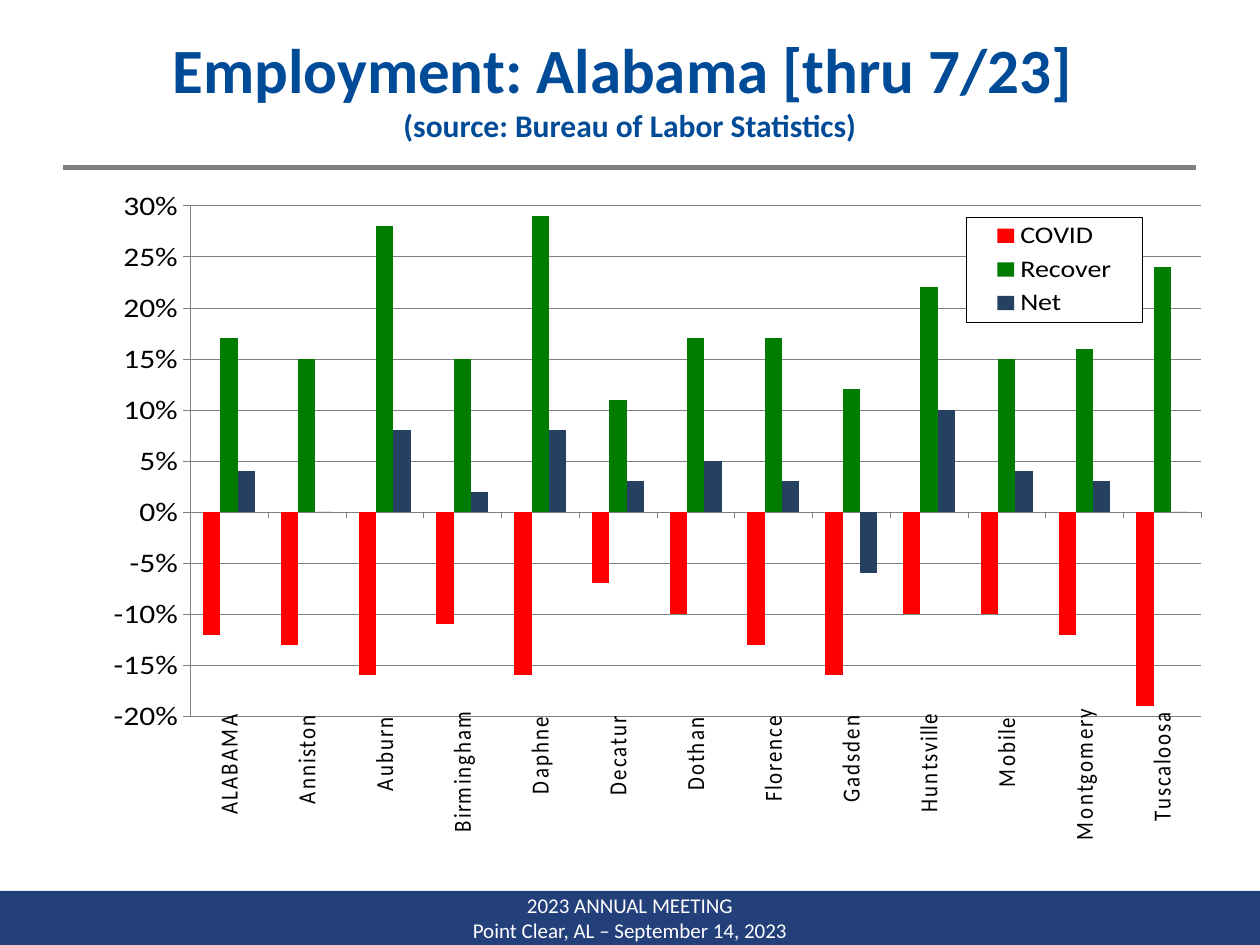
from lxml import etree
from pptx import Presentation
from pptx import util as u
from pptx.chart.data import CategoryChartData
from pptx.dml.color import RGBColor
from pptx.enum import chart as ch, shapes, text
from pptx.oxml import parse_xml
from pptx.oxml.ns import nsdecls, qn

NAVY = RGBColor(0x23, 0x40, 0x7A)
BLUE = RGBColor(0x00, 0x4B, 0x98)
GRAY = RGBColor(0x80, 0x80, 0x80)
BLACK = RGBColor(0, 0, 0)
WHITE = RGBColor(0xFF, 0xFF, 0xFF)
RED = RGBColor(0xFF, 0x00, 0x00)
GREEN = RGBColor(0x00, 0x7C, 0x01)
SLATE = RGBColor(0x25, 0x40, 0x61)
FONT = "Calibri"

# Metro areas: (name, COVID, Recover, Net)
METROS = [
    ("ALABAMA", -0.12, 0.17, 0.04),
    ("Anniston", -0.13, 0.15, 0),
    ("Auburn", -0.16, 0.28, 0.08),
    ("Birmingham", -0.11, 0.15, 0.02),
    ("Daphne", -0.16, 0.29, 0.08),
    ("Decatur", -0.07, 0.11, 0.03),
    ("Dothan", -0.10, 0.17, 0.05),
    ("Florence", -0.13, 0.17, 0.03),
    ("Gadsden", -0.16, 0.12, -0.06),
    ("Huntsville", -0.10, 0.22, 0.10),
    ("Mobile", -0.10, 0.15, 0.04),
    ("Montgomery", -0.12, 0.16, 0.03),
    ("Tuscaloosa", -0.19, 0.24, 0),
]
SERIES = [("COVID", RED), ("Recover", GREEN), ("Net", SLATE)]


def style(font, size, color, bold=False):
    font.name, font.size, font.bold = FONT, u.Pt(size), bold
    font.color.rgb = color


def inches(box):
    return [u.Inches(n) for n in box]


def add_title(slide, box):
    title = slide.shapes.title
    title.left, title.top, title.width, title.height = inches(box)
    frame = title.text_frame
    frame.word_wrap = True
    frame.auto_size = text.MSO_AUTO_SIZE.NONE
    frame.vertical_anchor = text.MSO_ANCHOR.MIDDLE
    para = frame.paragraphs[0]
    para.alignment = text.PP_ALIGN.CENTER
    head = para.add_run()
    head.text = "Employment: Alabama [thru 7/23] "
    style(head.font, 36, BLUE, True)
    para.add_line_break()
    sub = para.add_run()
    sub.text = "(source: Bureau of Labor Statistics)"
    style(sub.font, 18, BLUE, True)


def add_rule(slide, left, right, top):
    ends = inches((left, top, right, top))
    rule = slide.shapes.add_connector(shapes.MSO_CONNECTOR.STRAIGHT, *ends)
    rule.line.color.rgb = GRAY
    rule.line.width = u.Pt(3)
    etree.SubElement(rule._element.spPr, qn("a:effectLst"))


def add_footer(slide, box):
    bar = slide.shapes.add_shape(shapes.MSO_SHAPE.RECTANGLE, *inches(box))
    bar.shadow.inherit = False
    bar.fill.solid()
    bar.fill.fore_color.rgb = NAVY
    bar.line.fill.background()
    frame = bar.text_frame
    frame.word_wrap = False
    frame.vertical_anchor = text.MSO_ANCHOR.MIDDLE
    frame.text = "2023 ANNUAL MEETING\nPoint Clear, AL – September 14, 2023"
    for para in frame.paragraphs:
        para.alignment = text.PP_ALIGN.CENTER
        style(para.font, 12, WHITE)


def layout(box, inner=False):
    """Manual chart layout, in fractions of the chart's size."""
    target = '<c:layoutTarget val="inner"/>' if inner else ""
    modes = "".join(f'<c:{k}Mode val="edge"/>' for k in "xy")
    sizes = "".join(f'<c:{k} val="{v}"/>' for k, v in zip("xywh", box))
    return parse_xml(
        f'<c:layout {nsdecls("c")}><c:manualLayout>{target}{modes}{sizes}'
        "</c:manualLayout></c:layout>")


def place(part, mark, box, inner=False):
    """Give a chart part its layout, right after its mark or at its start."""
    for old in part.findall(qn("c:layout")):
        part.remove(old)
    spot = 0 if mark is None else part.index(part.find(qn(mark))) + 1
    part.insert(spot, layout(box, inner))


def add_legend(chart, box):
    chart.has_legend = True
    legend = chart.legend
    legend.position = ch.XL_LEGEND_POSITION.RIGHT
    legend.include_in_layout = True
    style(legend.font, 16, BLACK)
    place(legend._element, "c:legendPos", box)
    frame = parse_xml(
        f'<c:spPr {nsdecls("c", "a")}>'
        f'<a:solidFill><a:srgbClr val="{WHITE}"/></a:solidFill>'
        f'<a:ln w="3175"><a:solidFill><a:srgbClr val="{BLACK}"/></a:solidFill></a:ln>'
        "</c:spPr>")
    legend._element.find(qn("c:txPr")).addprevious(frame)


def add_chart(slide, box):
    data = CategoryChartData(number_format="0%")
    names, *columns = zip(*METROS)
    data.categories = names
    for (name, _), values in zip(SERIES, columns):
        data.add_series(name, values)
    chart = slide.shapes.add_chart(
        ch.XL_CHART_TYPE.COLUMN_CLUSTERED, *inches(box), data).chart
    chart.has_title = False
    style(chart.font, 18, BLACK)

    # Bars
    plot = chart.plots[0]
    plot.gap_width, plot.overlap = 150, 0
    plot.vary_by_categories = False
    for series, (_, color) in zip(plot.series, SERIES):
        series.invert_if_negative = False
        series.format.fill.solid()
        series.format.fill.fore_color.rgb = color

    # Axes
    cat, val = chart.category_axis, chart.value_axis
    val.has_major_gridlines = True
    for axis, size in ((cat, 14), (val, 18)):
        axis.major_tick_mark = ch.XL_TICK_MARK.OUTSIDE
        axis.minor_tick_mark = ch.XL_TICK_MARK.NONE
        style(axis.tick_labels.font, size, BLACK)
    for part in (cat, val, val.major_gridlines):
        part.format.line.color.rgb = GRAY
        part.format.line.width = u.Pt(0.25)
    cat.tick_label_position = ch.XL_TICK_LABEL_POSITION.LOW
    turn = cat._element.find(qn("c:txPr")).find(qn("a:bodyPr"))
    turn.set("rot", "-5400000")
    turn.set("vert", "horz")
    val.minimum_scale, val.maximum_scale, val.major_unit = -0.2, 0.3, 0.05
    val.tick_labels.number_format = "0%"
    val.tick_labels.number_format_is_linked = False

    # Plot area and legend
    area = chart._chartSpace.chart.plotArea
    place(area, None, (0.09, 0.03, 0.86, 0.92), inner=True)
    add_legend(chart, (0.75, 0.05, 0.15, 0.19))


def main():
    deck = Presentation()
    deck.slide_width, deck.slide_height = inches((10, 7.5))
    slide = deck.slides.add_slide(deck.slide_layouts[5])
    add_footer(slide, (0, 7.07, 10, 0.43))
    add_rule(slide, 0.5, 9.49, 1.33)
    add_title(slide, (0.5, 0.3, 9, 0.78))
    add_chart(slide, (0.67, 1.5, 9.33, 5.17))
    deck.save("out.pptx")


if __name__ == "__main__":
    main()
